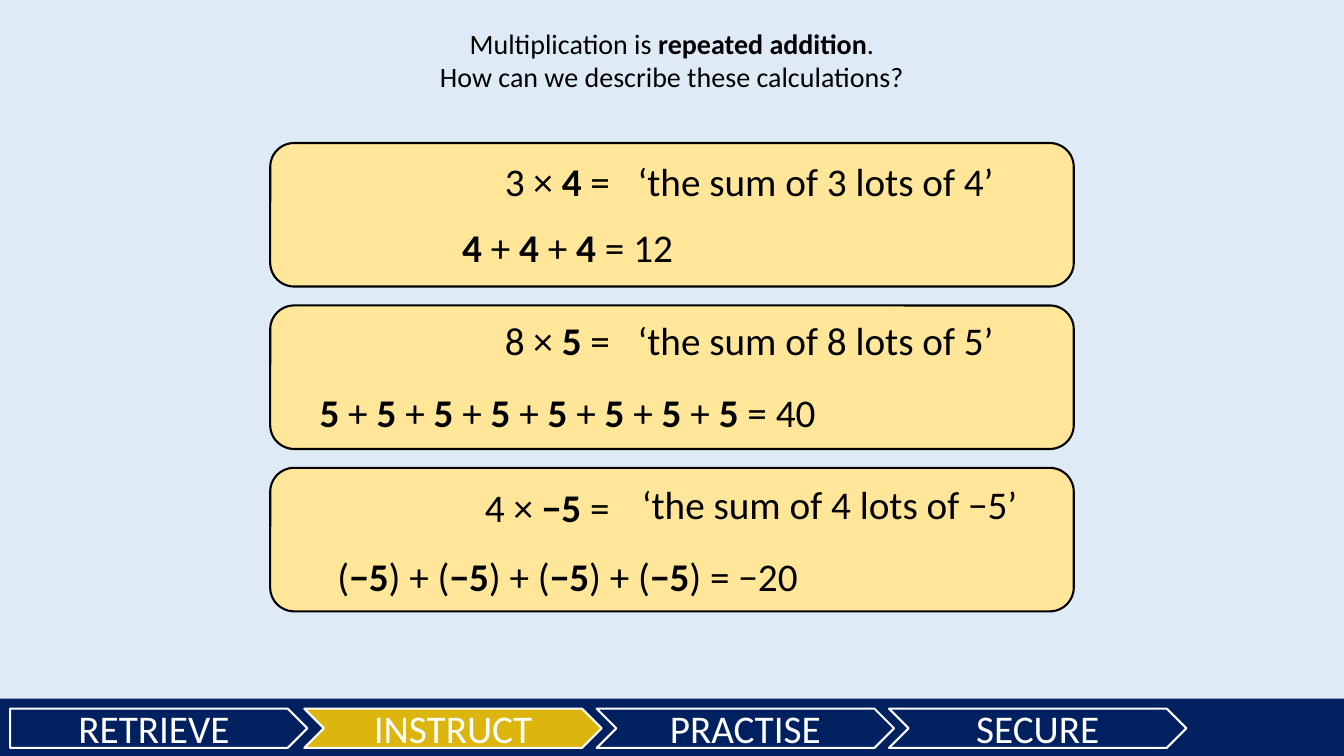
from pptx import Presentation
from pptx.dml.color import RGBColor
from pptx.enum.shapes import MSO_SHAPE
from pptx.enum.text import MSO_ANCHOR, MSO_AUTO_SIZE, PP_ALIGN
from pptx.util import Pt

PALE_BLUE = RGBColor(0xDE, 0xEB, 0xF7)
NAVY = RGBColor(0x00, 0x20, 0x60)
GOLD = RGBColor(0xDC, 0xB5, 0x0E)
CREAM = RGBColor(0xFF, 0xE6, 0x99)
WHITE = RGBColor(0xFF, 0xFF, 0xFF)
BLACK = RGBColor(0x00, 0x00, 0x00)


class LessonSlide:
    font_name = "Calibri"
    line_width = 1.5
    text_size = 28

    def __init__(self, presentation):
        self.slide = presentation.slides.add_slide(presentation.slide_layouts[5])
        self.slide.background.fill.solid()
        self.slide.background.fill.fore_color.rgb = PALE_BLUE

    def apply(self, target, values):
        for name, value in values.items():
            setattr(target, name, value)

    def fill_text(self, frame, lines, size, color, frame_format):
        self.apply(frame, frame_format)
        for index, line in enumerate(lines):
            paragraph = frame.add_paragraph() if index else frame.paragraphs[0]
            self.apply(paragraph, {"alignment": PP_ALIGN.CENTER, "line_spacing": 1.0,
                                   "space_before": Pt(0)})
            for position, text in enumerate(line.split("*")):
                if text:
                    run = paragraph.add_run()
                    run.text = text
                    self.apply(run.font, {"name": self.font_name, "size": Pt(size),
                                          "bold": position % 2 == 1})
                    run.font.color.rgb = color

    def title(self, lines, left, top, width, height):
        title = self.slide.shapes.title
        self.apply(title, {"left": Pt(left), "top": Pt(top),
                           "width": Pt(width), "height": Pt(height)})
        self.fill_text(title.text_frame, lines, 20, BLACK, {
            "word_wrap": False, "auto_size": MSO_AUTO_SIZE.SHAPE_TO_FIT_TEXT,
            "vertical_anchor": MSO_ANCHOR.TOP})

    def shape(self, kind, left, top, width, height, fill, line=None, label=None):
        shape = self.slide.shapes.add_shape(kind, Pt(left), Pt(top), Pt(width), Pt(height))
        shape.shadow.inherit = False
        shape.fill.solid()
        shape.fill.fore_color.rgb = fill
        if line is None:
            shape.line.fill.background()
        else:
            shape.line.color.rgb = line
            shape.line.width = Pt(self.line_width)
        if label:
            self.fill_text(shape.text_frame, [label], self.text_size, WHITE,
                           {"vertical_anchor": MSO_ANCHOR.MIDDLE})

    def text(self, text, left, top, width):
        box = self.slide.shapes.add_textbox(Pt(left), Pt(top), Pt(width), Pt(41.2))
        self.fill_text(box.text_frame, [text], self.text_size, BLACK, {
            "word_wrap": False, "auto_size": MSO_AUTO_SIZE.SHAPE_TO_FIT_TEXT})


STAGES = [
    ("RETRIEVE", 7.2, MSO_SHAPE.PENTAGON, NAVY),
    ("INSTRUCT", 217.4, MSO_SHAPE.CHEVRON, GOLD),
    ("PRACTISE", 426.2, MSO_SHAPE.CHEVRON, NAVY),
    ("SECURE", 635, MSO_SHAPE.CHEVRON, NAVY),
]

CALCULATIONS = [
    {"product": ("3 × *4* =", 108.7, 90.7),
     "phrase": ("‘the sum of 3 lots of 4’", 108.7, 272.2),
     "sum": (" + ".join(["*4*"] * 3) + " = 12", 156.2, 167.8)},
    {"product": ("8 × *5* =", 222.5, 90.7),
     "phrase": ("‘the sum of 8 lots of 5’", 222.5, 272.2),
     "sum": (" + ".join(["*5*"] * 8) + " = 40", 273.6, 374.4)},
    {"product": ("4 × *−5* =", 342, 105.1),
     "phrase": ("‘the sum of 4 lots of −5’", 339.8, 292.3),
     "sum": (" + ".join(["(*−5*)"] * 4) + " = −20", 391, 348.5)},
]

PRODUCT_RIGHT = 443.5
PHRASE_LEFT = 446.4
SUM_CENTRE = 405.4


def main():
    presentation = Presentation()
    presentation.slide_width = Pt(960)
    presentation.slide_height = Pt(540)
    lesson = LessonSlide(presentation)

    lesson.shape(MSO_SHAPE.RECTANGLE, 0, 499, 960, 41, NAVY)
    for label, left, kind, fill in STAGES:
        lesson.shape(kind, left, 506.2, 212.4, 28, fill, WHITE, label)

    lesson.title(["Multiplication is *repeated addition*.",
                  "How can we describe these calculations?"], 305.3, 15.1, 349.2, 55.4)

    for index, calculation in enumerate(CALCULATIONS):
        lesson.shape(MSO_SHAPE.ROUNDED_RECTANGLE, 193, 102.2 + 116 * index,
                     574, 102.5, CREAM, BLACK)
        text, top, width = calculation["product"]
        lesson.text(text, PRODUCT_RIGHT - width, top, width)
        text, top, width = calculation["sum"]
        lesson.text(text, SUM_CENTRE - width / 2, top, width)
        text, top, width = calculation["phrase"]
        lesson.text(text, PHRASE_LEFT, top, width)

    presentation.save("out.pptx")


if __name__ == "__main__":
    main()
